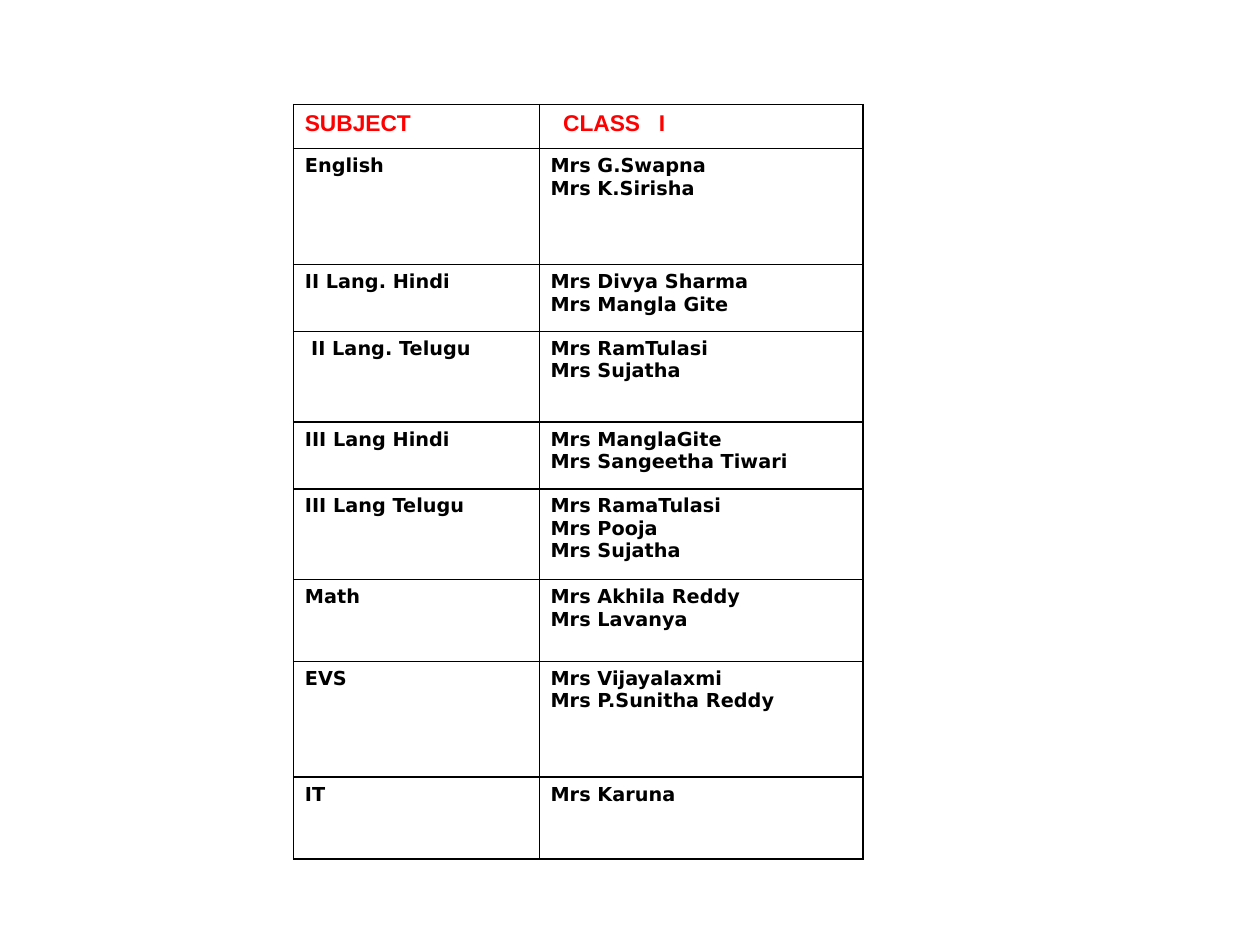
from pptx import Presentation
from pptx.dml.color import RGBColor
from pptx.enum.text import MSO_ANCHOR
from pptx.oxml.ns import qn
from pptx.util import Inches, Pt
from lxml import etree

TOP = MSO_ANCHOR.TOP
BLANK = 6
COLORS = {"head": "FF0000", "text": "000000", "line": "000000"}
PAD = 0.09
WIDTHS = [1.95, 2.57]
HEAD_ROW = 0.35

# Subject, teachers, row height
ROWS = [
    ("English", ["Mrs G.Swapna", "Mrs K.Sirisha"], 0.92),
    ("II Lang. Hindi", ["Mrs Divya Sharma", "Mrs Mangla Gite"], 0.53),
    ("II Lang. Telugu", ["Mrs RamTulasi", "Mrs Sujatha"], 0.72),
    ("III Lang Hindi", ["Mrs ManglaGite", "Mrs Sangeetha Tiwari"], 0.53),
    ("III Lang Telugu", ["Mrs RamaTulasi", "Mrs Pooja", "Mrs Sujatha"], 0.72),
    ("Math", ["Mrs Akhila Reddy", "Mrs Lavanya"], 0.65),
    ("EVS", ["Mrs Vijayalaxmi", "Mrs P.Sunitha Reddy"], 0.92),
    ("IT", ["Mrs Karuna"], 0.65),
]
INDENTS = {"II Lang. Telugu": 0.05}


def add_text(para, text, font="DejaVu Sans", size=11, color="text", tab=None):
    if tab:
        stops = etree.SubElement(para._p.get_or_add_pPr(), qn("a:tabLst"))
        etree.SubElement(stops, qn("a:tab"), pos=str(Inches(tab)), algn="l")
    run = para.add_run()
    run.text = text
    run.font.name = font
    run.font.size = Pt(size)
    run.font.bold = True
    run.font.color.rgb = RGBColor.from_string(COLORS[color])


def add_border(cell, width=1):
    props = cell._tc.get_or_add_tcPr()
    for side in ("lnL", "lnR", "lnT", "lnB"):
        line = etree.SubElement(props, qn(f"a:{side}"), w=str(Pt(width)))
        fill = etree.SubElement(line, qn("a:solidFill"))
        etree.SubElement(fill, qn("a:srgbClr"), val=COLORS["line"])


def fill_cell(cell, lines, indent=0, **style):
    add_border(cell)
    cell.fill.background()
    cell.vertical_anchor = TOP
    cell.margin_left = Inches(PAD + indent)
    cell.margin_right = Inches(PAD)
    cell.margin_top = cell.margin_bottom = Inches(0.05)
    frame = cell.text_frame
    for i, line in enumerate(lines):
        para = frame.add_paragraph() if i else frame.paragraphs[0]
        add_text(para, line, **style)


def add_grid(slide):
    heights = [HEAD_ROW] + [row[2] for row in ROWS]
    frame = slide.shapes.add_table(
        len(heights), len(WIDTHS), Inches(2.33), Inches(0.83),
        Inches(sum(WIDTHS)), Inches(sum(heights)))
    table = frame.table
    table.first_row = table.horz_banding = False
    for col, width in zip(table.columns, WIDTHS):
        col.width = Inches(width)
    for row, height in zip(table.rows, heights):
        row.height = Inches(height)
    return table


def main():
    prs = Presentation()
    prs.slide_width, prs.slide_height = Inches(10), Inches(7.5)
    slide = prs.slides.add_slide(prs.slide_layouts[BLANK])
    table = add_grid(slide)

    # Header row
    head = {"font": "Arial", "size": 13, "color": "head"}
    fill_cell(table.cell(0, 0), ["SUBJECT"], **head)
    fill_cell(table.cell(0, 1), ["CLASS\tI"], indent=0.1, tab=0.76, **head)

    # Subjects and their teachers
    for i, (subject, names, _) in enumerate(ROWS, 1):
        fill_cell(table.cell(i, 0), [subject], indent=INDENTS.get(subject, 0))
        fill_cell(table.cell(i, 1), names)

    prs.save("out.pptx")


if __name__ == "__main__":
    main()
